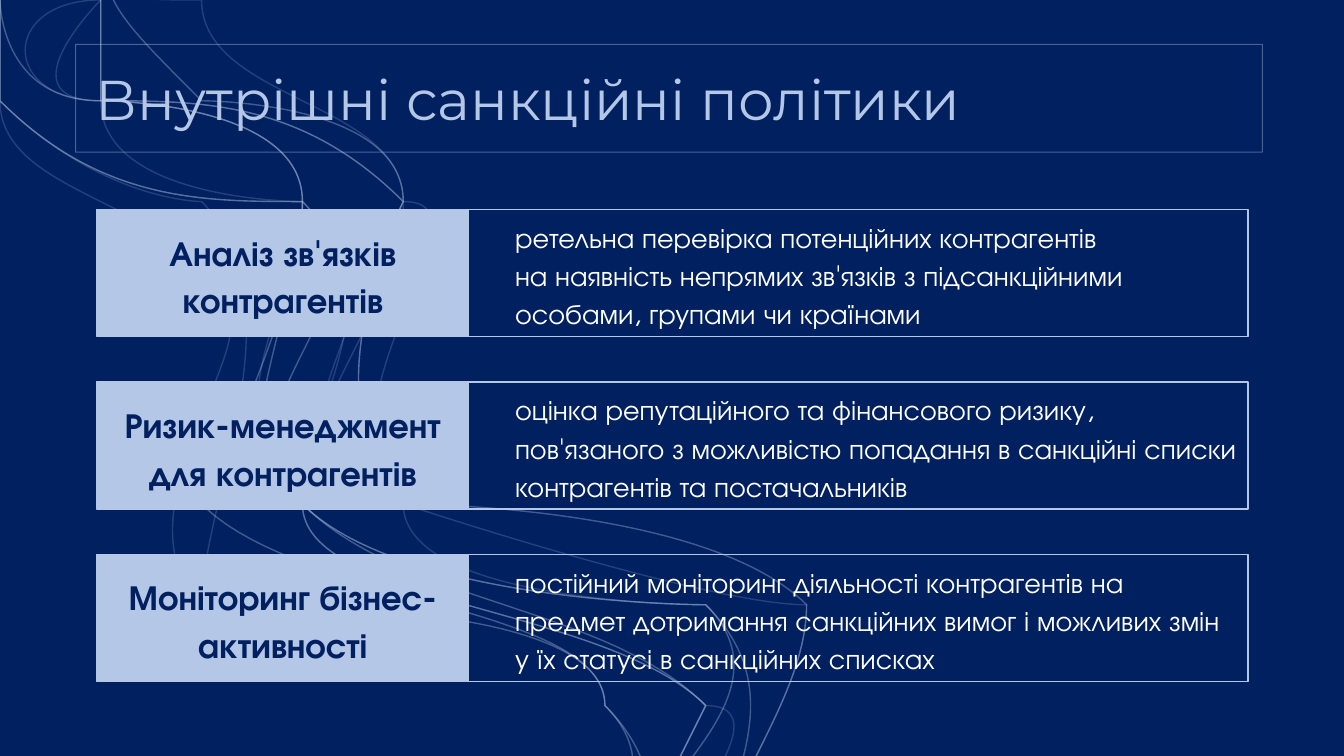
from lxml import etree
from pptx import Presentation
from pptx.dml.color import RGBColor
from pptx.enum.shapes import MSO_SHAPE
from pptx.enum.text import MSO_ANCHOR, MSO_AUTO_SIZE, PP_ALIGN
from pptx.oxml.ns import qn
from pptx.util import Inches, Pt

RECTANGLE = MSO_SHAPE.RECTANGLE
TOP, MIDDLE = MSO_ANCHOR.TOP, MSO_ANCHOR.MIDDLE
LEFT, CENTER = PP_ALIGN.LEFT, PP_ALIGN.CENTER

NAVY = RGBColor(0x00, 0x20, 0x60)
PALE_BLUE = RGBColor(0xB4, 0xC7, 0xE7)
WHITE = RGBColor(0xFF, 0xFF, 0xFF)

# Grid of the policy rows, in inches
FIRST_ROW, ROW_PITCH, ROW_HEIGHT = 2.08, 1.71, 1.26
LABEL_LEFT, LABEL_WIDTH = 0.96, 3.69
DETAIL_LEFT, DETAIL_WIDTH = 4.62, 7.76

LABEL_FORMAT = {"name": "TeX Gyre Adventor", "size": Pt(25), "bold": True}
DETAIL_FORMAT = {"name": "TeX Gyre Adventor", "size": Pt(20), "bold": False}
TITLE_FORMAT = {"name": "Montserrat", "size": Pt(40), "bold": False}

POLICIES = [
    ("Аналіз зв'язків контрагентів",
     ["ретельна перевірка потенційних контрагентів",
      "на наявність непрямих зв'язків з підсанкційними особами, групами чи країнами"]),
    ("Ризик-менеджмент для контрагентів",
     ["оцінка репутаційного та фінансового ризику, пов'язаного з можливістю "
      "попадання в санкційні списки контрагентів та постачальників"]),
    ("Моніторинг бізнес-активності",
     ["постійний моніторинг діяльності контрагентів на предмет дотримання "
      "санкційних вимог і можливих змін у їх статусі в санкційних списках"]),
]

# Start of the first wave, then three Bezier points for each of its curves
WAVE = [
    (-0.26, 0.29),
    (-0.37, 0.68), (-0.49, 1.08), (-0.05, 1.46),
    (0.39, 1.83), (2.02, 1.83), (2.37, 2.52),
    (2.72, 3.21), (1.45, 4.84), (2.06, 5.59),
    (2.67, 6.34), (5.5, 6.37), (6.04, 7.04),
    (6.58, 7.7), (5.26, 9.05), (5.27, 9.56),
    (5.29, 10.07), (5.71, 10.08), (6.13, 10.1),
]
WAVE_STEPS = [(0, 0)] + [(0.12, -0.065)] * 13 + [(0.11, -0.085)] * 2


def style_outline(shape, width, opacity=100):
    shape.shadow.inherit = False
    shape.line.color.rgb = PALE_BLUE
    shape.line.width = Pt(width)
    if opacity < 100:
        color = shape.line._get_or_add_ln().find(".//" + qn("a:srgbClr"))
        etree.SubElement(color, qn("a:alpha"), val=str(opacity * 1000))


def write_text(shape, texts, format_values, color, alignment, spacing, indent=0):
    for index, text in enumerate(texts):
        frame = shape.text_frame
        paragraph = frame.add_paragraph() if index else frame.paragraphs[0]
        paragraph.alignment = alignment
        paragraph.line_spacing = spacing
        paragraph._p.get_or_add_pPr().set("marL", str(Inches(indent)))
        run = paragraph.add_run()
        run.text = text
        run.font.color.rgb = color
        for attribute, value in format_values.items():
            setattr(run.font, attribute, value)


presentation = Presentation()
presentation.slide_width = Inches(13.33)
presentation.slide_height = Inches(7.5)
slide = presentation.slides.add_slide(presentation.slide_layouts[6])
shapes = slide.shapes

# Navy backdrop
backdrop = shapes.add_shape(RECTANGLE, 0, 0, presentation.slide_width, presentation.slide_height)
backdrop.shadow.inherit = False
backdrop.fill.solid()
backdrop.fill.fore_color.rgb = NAVY
backdrop.line.fill.background()

# Band of parallel waves
shift_x = shift_y = 0
for step_x, step_y in WAVE_STEPS:
    shift_x += step_x
    shift_y += step_y
    points = [(x + shift_x, y + shift_y) for x, y in WAVE]
    builder = shapes.build_freeform(*points[0], scale=Inches(1))
    builder.add_line_segments(points[1:], close=False)
    wave = builder.convert_to_shape()
    wave.fill.background()
    style_outline(wave, 1, 20)
    # Turn every three straight segments into one Bezier curve
    outline = wave._element.find(".//" + qn("a:path"))
    segments = outline.findall(qn("a:lnTo"))
    for first in range(0, len(segments), 3):
        curve = etree.SubElement(outline, qn("a:cubicBezTo"))
        for segment in segments[first:first + 3]:
            curve.append(segment[0])
            outline.remove(segment)

# Title
title = shapes.add_shape(RECTANGLE, Inches(0.75), Inches(0.44), Inches(11.77), Inches(1.07))
title.fill.background()
style_outline(title, 0.75, 40)
title_frame = title.text_frame
title_frame.word_wrap = True
title_frame.auto_size = MSO_AUTO_SIZE.SHAPE_TO_FIT_TEXT
title_frame.vertical_anchor = TOP
for side in ("left", "right", "top", "bottom"):
    setattr(title_frame, "margin_" + side, Inches(0.2))
write_text(title, ["Внутрішні санкційні політики"], TITLE_FORMAT, PALE_BLUE, LEFT, 1.0)

# Filled labels, then outlined details
for column in ("label", "detail"):
    for row, (label_text, detail_texts) in enumerate(POLICIES):
        is_label = column == "label"
        left, width = (LABEL_LEFT, LABEL_WIDTH) if is_label else (DETAIL_LEFT, DETAIL_WIDTH)
        box = shapes.add_shape(RECTANGLE, Inches(left), Inches(FIRST_ROW + row * ROW_PITCH),
                               Inches(width), Inches(ROW_HEIGHT))
        style_outline(box, 1)
        box.text_frame.word_wrap = True
        box.text_frame.vertical_anchor = MIDDLE
        if is_label:
            box.fill.solid()
            box.fill.fore_color.rgb = PALE_BLUE
            write_text(box, [label_text], LABEL_FORMAT, NAVY, CENTER, 1.14)
        else:
            box.fill.background()
            write_text(box, detail_texts, DETAIL_FORMAT, WHITE, LEFT, 1.14, indent=0.39)

presentation.save("out.pptx")
